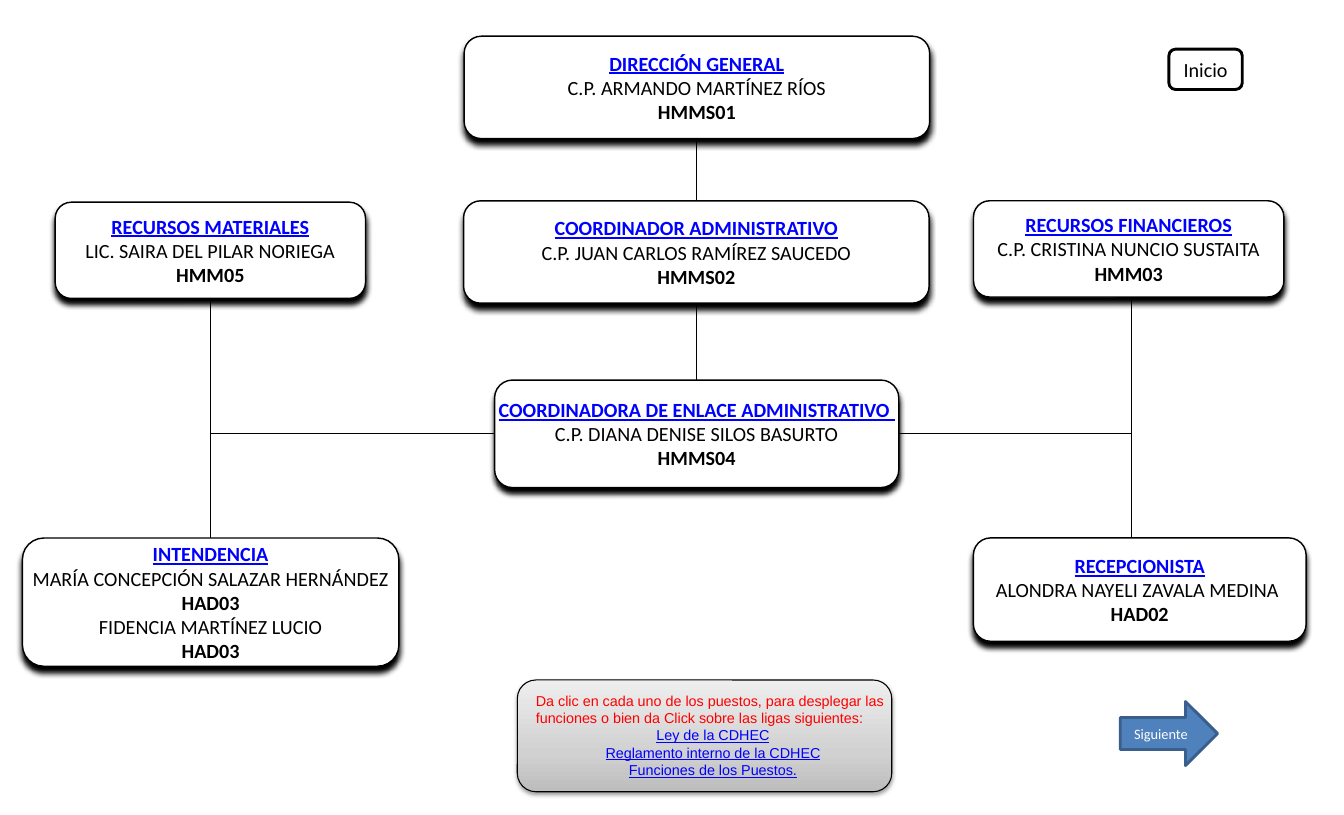
from dataclasses import dataclass

from lxml.etree import SubElement
from pptx import Presentation
from pptx.dml.color import RGBColor
from pptx.enum.shapes import MSO_CONNECTOR as Connector
from pptx.enum.shapes import MSO_SHAPE as Preset
from pptx.enum.text import MSO_ANCHOR as Anchor
from pptx.enum.text import PP_ALIGN as Align
from pptx.oxml.ns import qn
from pptx.shapes.autoshape import Shape
from pptx.slide import Slide
from pptx.text.text import _Paragraph as Paragraph
from pptx.util import Pt

BLACK, WHITE, LINK_BLUE = "000000", "FFFFFF", "0000FF"
LEFT_TRUNK, CENTER_TRUNK, RIGHT_TRUNK = 146.2, 484.6, 787.7
CROSSBAR = 301.7
HELP_SIZE = 10


@dataclass(frozen=True)
class Frame:
    left: float
    top: float
    width: float
    height: float

    def lengths(self) -> list[Pt]:
        return [Pt(n) for n in (self.left, self.top, self.width, self.height)]


@dataclass(frozen=True)
class Post:
    frame: Frame
    title: str
    holders: tuple[tuple[str, str], ...]


@dataclass(frozen=True)
class Link:
    x1: float
    y1: float
    x2: float
    y2: float


@dataclass(frozen=True)
class Button:
    preset: Preset
    frame: Frame
    text: str
    size: float
    ink: str
    fill: str
    border: str


@dataclass(frozen=True)
class Shadow:
    alpha: int
    blur: float
    distance: float


POSTS = (
    Post(Frame(323, 25.2, 324, 71.3), "DIRECCIÓN GENERAL",
         (("C.P. ARMANDO MARTÍNEZ RÍOS", "HMMS01"),)),
    Post(Frame(322.6, 139.8, 324, 71.3), "COORDINADOR ADMINISTRATIVO",
         (("C.P. JUAN CARLOS RAMÍREZ SAUCEDO", "HMMS02"),)),
    Post(Frame(38.4, 140.8, 216, 67), "RECURSOS MATERIALES",
         (("LIC. SAIRA DEL PILAR NORIEGA", "HMM05"),)),
    Post(Frame(15.6, 374.6, 262, 89.3), "INTENDENCIA",
         (("MARÍA CONCEPCIÓN SALAZAR HERNÁNDEZ", "HAD03"),
          ("FIDENCIA MARTÍNEZ LUCIO", "HAD03"))),
    Post(Frame(344.2, 264.6, 281.3, 74.9), "COORDINADORA DE ENLACE ADMINISTRATIVO ",
         (("C.P. DIANA DENISE SILOS BASURTO", "HMMS04"),)),
    Post(Frame(677.5, 139.8, 216, 67), "RECURSOS FINANCIEROS",
         (("C.P. CRISTINA NUNCIO SUSTAITA", "HMM03"),)),
    Post(Frame(677.4, 374.5, 231.6, 72), "RECEPCIONISTA",
         (("ALONDRA NAYELI ZAVALA MEDINA ", "HAD02"),)),
)
LINKS = (
    Link(RIGHT_TRUNK, 206.7, RIGHT_TRUNK, 378),
    Link(LEFT_TRUNK, CROSSBAR, RIGHT_TRUNK, CROSSBAR),
    Link(CENTER_TRUNK, 80, CENTER_TRUNK, 317.5),
    Link(LEFT_TRUNK, 207.4, LEFT_TRUNK, 374.4),
)
BUTTONS = (
    Button(Preset.RIGHT_ARROW, Frame(779.6, 488.4, 67.7, 44.6),
           "Siguiente", 10, WHITE, "4F81BD", "3A5F8C"),
    Button(Preset.ROUNDED_RECTANGLE, Frame(813.4, 34.2, 51.1, 28.1),
           "Inicio", 14, BLACK, WHITE, BLACK),
)
HELP_PANEL = Frame(360, 473.4, 260.6, 77.8)
HELP_TEXT = Frame(365.8, 478.2, 260.6, 67.7)
HELP_INTRO = ("Da clic en cada uno de los puestos, para desplegar las funciones "
              "o bien da Click sobre las ligas siguientes:")
HELP_LINKS = ("Ley de la CDHEC", "Reglamento interno de la CDHEC", "Funciones de los Puestos.")
PANEL_STOPS = ((0, "BDBDBD"), (35, "D1D1D1"), (100, "EEEEEE"))
POST_SHADOW = Shadow(100, 4, 4)
PANEL_SHADOW = Shadow(38, 3.1, 1.6)


def color(value: str) -> RGBColor:
    return RGBColor.from_string(value)


def style(para: Paragraph, size: float, ink: str, face: str = "Calibri", bold: bool = False,
          underline: bool = False, align: Align = Align.CENTER) -> None:
    para.alignment = align
    for span in para.runs:
        font = span.font
        font.size, font.name, font.bold, font.underline = Pt(size), face, bold, underline
        font.color.rgb = color(ink)


def add_box(page: Slide, preset: Preset, frame: Frame, border: str, weight: float) -> Shape:
    box = page.shapes.add_shape(preset, *frame.lengths())
    box.line.color.rgb = color(border)
    box.line.width = Pt(weight)
    box.shadow.inherit = False
    return box


def fill_solid(box: Shape, value: str) -> None:
    box.fill.solid()
    box.fill.fore_color.rgb = color(value)


def cast_shadow(box: Shape, shadow: Shadow) -> None:
    effects = box.element.spPr.find(qn("a:effectLst"))
    outer = SubElement(effects, qn("a:outerShdw"), blurRad=str(Pt(shadow.blur)),
                       dist=str(Pt(shadow.distance)), dir="5400000", rotWithShape="0")
    tint = SubElement(outer, qn("a:srgbClr"), val=BLACK)
    SubElement(tint, qn("a:alpha"), val=str(shadow.alpha * 1000))


def add_link(page: Slide, link: Link) -> None:
    line = page.shapes.add_connector(
        Connector.STRAIGHT, Pt(link.x1), Pt(link.y1), Pt(link.x2), Pt(link.y2))
    line.line.color.rgb = color(BLACK)
    line.line.width = Pt(0.75)
    SubElement(line.element.spPr, qn("a:effectLst"))


def add_post(page: Slide, post: Post) -> None:
    box = add_box(page, Preset.ROUNDED_RECTANGLE, post.frame, BLACK, 1)
    fill_solid(box, WHITE)
    cast_shadow(box, POST_SHADOW)
    frame = box.text_frame
    frame.margin_left = frame.margin_right = Pt(12.2)
    frame.margin_top = frame.margin_bottom = Pt(6.5)
    frame.word_wrap = False
    frame.vertical_anchor = Anchor.MIDDLE
    lines = [line for holder in post.holders for line in holder]
    frame.text = "\n".join([post.title, *lines])
    title, *details = frame.paragraphs
    style(title, 14, LINK_BLUE, bold=True, underline=True)
    for index, para in enumerate(details):
        style(para, 14, BLACK, bold=index % 2 == 1)


def add_help(page: Slide) -> None:
    panel = add_box(page, Preset.ROUNDED_RECTANGLE, HELP_PANEL, BLACK, 0.75)
    panel.fill.gradient()
    panel.fill.gradient_angle = 90
    stops = panel.element.spPr.find(qn("a:gradFill")).find(qn("a:gsLst"))
    stops.clear()
    for position, value in PANEL_STOPS:
        stop = SubElement(stops, qn("a:gs"), pos=str(position * 1000))
        SubElement(stop, qn("a:srgbClr"), val=value)
    cast_shadow(panel, PANEL_SHADOW)

    box = page.shapes.add_textbox(*HELP_TEXT.lengths())
    box.text_frame.word_wrap = True
    box.text_frame.text = "\n".join([HELP_INTRO, *HELP_LINKS])
    intro, *links = box.text_frame.paragraphs
    style(intro, HELP_SIZE, "FF0000", face="Arial", align=Align.LEFT)
    for para in links:
        style(para, HELP_SIZE, LINK_BLUE, face="Arial", underline=True)


def add_button(page: Slide, button: Button) -> None:
    box = add_box(page, button.preset, button.frame, button.border, 2)
    fill_solid(box, button.fill)
    box.text_frame.text = button.text
    box.text_frame.word_wrap = True
    box.text_frame.vertical_anchor = Anchor.MIDDLE
    style(box.text_frame.paragraphs[0], button.size, button.ink)


def main() -> None:
    deck = Presentation()
    deck.slide_width, deck.slide_height = Pt(935.3), Pt(567.4)
    page = deck.slides.add_slide(deck.slide_layouts[6])
    for link in LINKS:
        add_link(page, link)
    for post in POSTS:
        add_post(page, post)
    add_help(page)
    for button in BUTTONS:
        add_button(page, button)
    deck.save("out.pptx")


if __name__ == "__main__":
    main()
